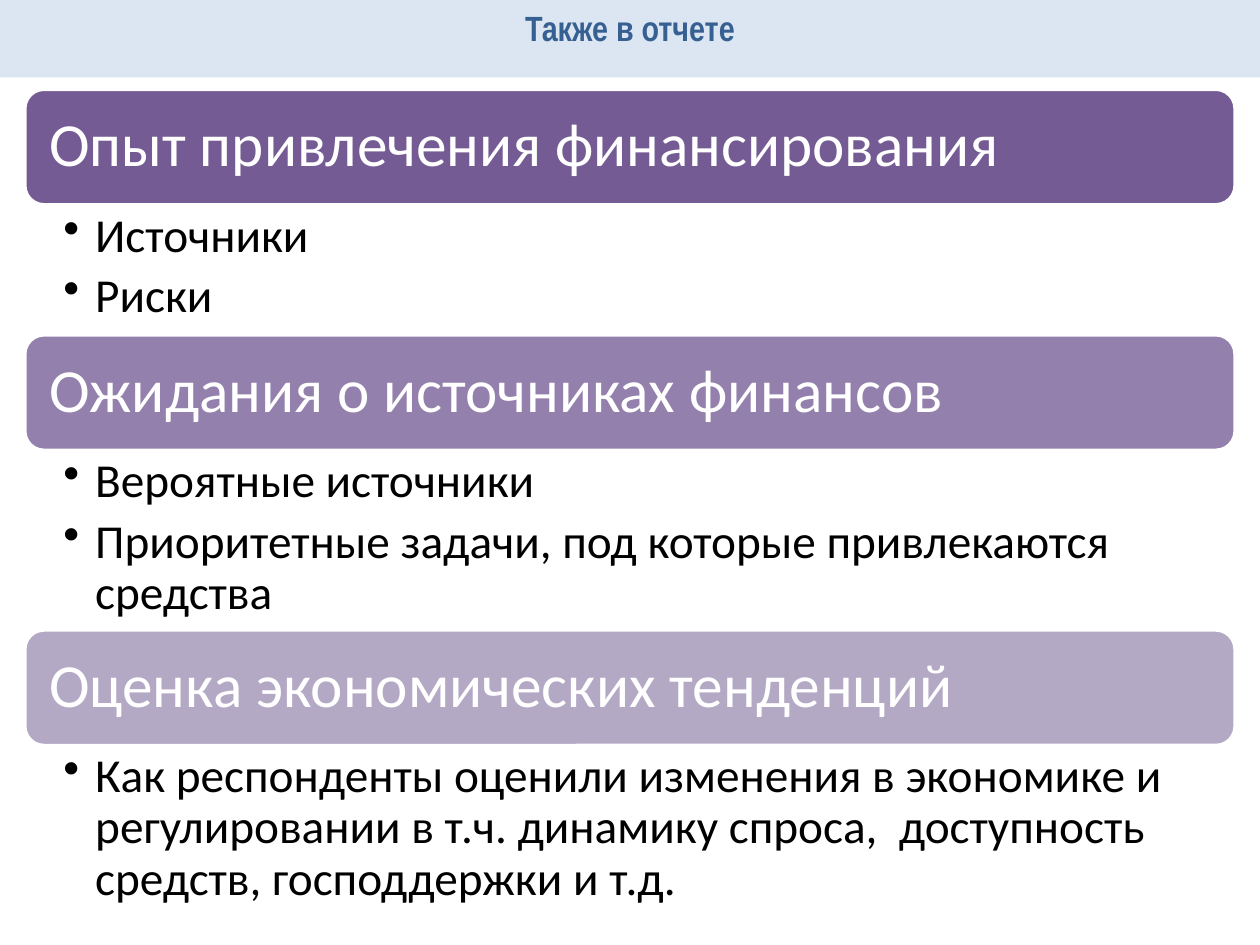
from lxml.etree import SubElement
from pptx import Presentation
from pptx.dml.color import RGBColor
from pptx.enum.shapes import MSO_SHAPE as Shape
from pptx.enum.text import MSO_ANCHOR as Anchor, PP_ALIGN as Align
from pptx.oxml.ns import qn
from pptx.util import Cm, Pt

WHITE = RGBColor(0xFF, 0xFF, 0xFF)
BLACK = RGBColor(0x00, 0x00, 0x00)
PALE_BLUE = RGBColor(0xDC, 0xE6, 0xF2)
DARK_BLUE = RGBColor(0x37, 0x60, 0x92)
DARK_PURPLE = RGBColor(0x74, 0x5B, 0x93)
MID_PURPLE = RGBColor(0x93, 0x80, 0xAD)
LIGHT_PURPLE = RGBColor(0xB4, 0xA9, 0xC5)

LEFT, WIDTH = Cm(0.5), Cm(24.4)
HEADING_HEIGHT = Cm(2.33)

# heading, fill, height of the list below, list items
SECTIONS = [
    ("Опыт привлечения финансирования", DARK_PURPLE, Cm(2.62),
     ["Источники", "Риски"]),
    ("Ожидания о источниках финансов", MID_PURPLE, Cm(3.62),
     ["Вероятные источники",
      "Приоритетные задачи, под которые привлекаются средства"]),
    ("Оценка экономических тенденций", LIGHT_PURPLE, Cm(3.43),
     ["Как респонденты оценили изменения в экономике и регулировании "
      "в т.ч. динамику спроса,  доступность средств, господдержки и т.д."]),
]


def write(para, text, font_name, size, color, align=Align.LEFT):
    para.text = text
    para.alignment = align
    font = para.runs[0].font
    font.name, font.size, font.color.rgb = font_name, Pt(size), color
    return font


def set_margins(frame, left, right, vertical):
    frame.word_wrap = True
    frame.margin_left, frame.margin_right = Cm(left), Cm(right)
    frame.margin_top = frame.margin_bottom = Cm(vertical)


deck = Presentation()
deck.slide_width, deck.slide_height = Cm(25.4), Cm(19.05)
page = deck.slides.add_slide(deck.slide_layouts[6])

title = page.shapes.add_shape(Shape.RECTANGLE, 0, 0, deck.slide_width, Cm(1.56))
title.shadow.inherit = False
title.fill.solid()
title.fill.fore_color.rgb = PALE_BLUE
title.line.fill.background()
set_margins(title.text_frame, 0.25, 0.25, 0.13)
title.text_frame.vertical_anchor = Anchor.TOP
title_font = write(title.text_frame.paragraphs[0], "Также в отчете",
                   "Arial Narrow", 20, DARK_BLUE, Align.CENTER)
title_font.bold = True

top = Cm(1.8)
for heading, color, list_height, items in SECTIONS:
    bar = page.shapes.add_shape(Shape.ROUNDED_RECTANGLE, LEFT, top, WIDTH, HEADING_HEIGHT)
    bar.shadow.inherit = False
    bar.fill.solid()
    bar.fill.fore_color.rgb = color
    bar.line.color.rgb = WHITE
    bar.line.width = Pt(2)
    set_margins(bar.text_frame, 0.38, 0.38, 0.38)
    bar.text_frame.vertical_anchor = Anchor.MIDDLE
    heading_para = bar.text_frame.paragraphs[0]
    write(heading_para, heading, "Calibri", 35, WHITE)
    heading_para.line_spacing = 0.9
    top += HEADING_HEIGHT

    box = page.shapes.add_textbox(LEFT, top, WIDTH, list_height)
    frame = box.text_frame
    set_margins(frame, 0.78, 0.69, 0.13)
    for index, item in enumerate(items):
        para = frame.add_paragraph() if index else frame.paragraphs[0]
        write(para, item, "Calibri", 27, BLACK)
        para.level = 1
        para.line_spacing = 0.9
        para.space_after = Pt(5.4)
        properties = para._p.get_or_add_pPr()
        properties.set("marL", str(Cm(0.64)))
        properties.set("indent", str(-Cm(0.64)))
        SubElement(properties, qn("a:buChar"), char="•")
    top += list_height

deck.save("out.pptx")
